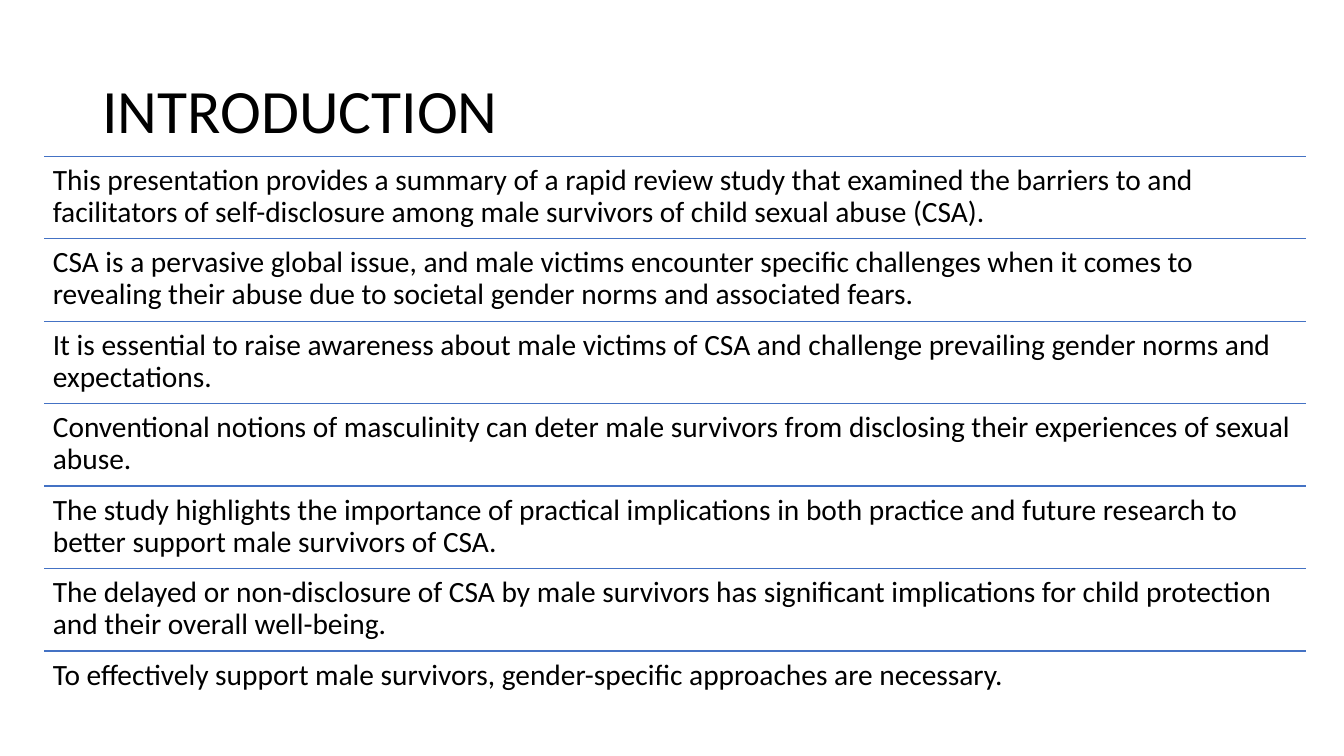
"""Build the introduction slide: a title above seven ruled statements."""
from lxml.etree import SubElement
from pptx import Presentation
from pptx.dml.color import RGBColor
from pptx.enum.shapes import MSO_CONNECTOR
from pptx.enum.text import MSO_ANCHOR, MSO_AUTO_SIZE, PP_ALIGN
from pptx.oxml.ns import qn
from pptx.util import Pt

TITLE = "INTRODUCTION"
STATEMENTS = [
    "This presentation provides a summary of a rapid review study that examined the barriers to and "
    "facilitators of self-disclosure among male survivors of child sexual abuse (CSA).",
    "CSA is a pervasive global issue, and male victims encounter specific challenges when it comes to "
    "revealing their abuse due to societal gender norms and associated fears.",
    "It is essential to raise awareness about male victims of CSA and challenge prevailing gender norms "
    "and expectations.",
    "Conventional notions of masculinity can deter male survivors from disclosing their experiences of "
    "sexual abuse.",
    "The study highlights the importance of practical implications in both practice and future research "
    "to better support male survivors of CSA.",
    "The delayed or non-disclosure of CSA by male survivors has significant implications for child "
    "protection and their overall well-being.",
    "To effectively support male survivors, gender-specific approaches are necessary.",
]
THEME = {
    "font": "Calibri",
    "text": RGBColor(0, 0, 0),
    "rule": RGBColor(0x44, 0x72, 0xC4),
    "title_size": 44,
    "body_size": 21,
}
LEFT, TOP, WIDTH, PITCH = 31.5, 111.6, 901.6, 58.92
INSET = 6.3


def write(tf, text, size, anchor=MSO_ANCHOR.TOP, inset=None):
    """Fill a text frame with one formatted paragraph."""
    tf.word_wrap = True
    tf.auto_size = MSO_AUTO_SIZE.NONE
    tf.vertical_anchor = anchor
    if inset is not None:
        tf.margin_left = tf.margin_right = tf.margin_top = tf.margin_bottom = Pt(inset)
    p = tf.paragraphs[0]
    p.alignment = PP_ALIGN.LEFT
    p.line_spacing = 0.9
    r = p.add_run()
    r.text = text
    r.font.name = THEME["font"]
    r.font.size = Pt(size)
    r.font.color.rgb = THEME["text"]


def add_rule(s, y):
    """Draw a full-width rule at the given height."""
    rule = s.shapes.add_connector(
        MSO_CONNECTOR.STRAIGHT, Pt(LEFT), Pt(y), Pt(LEFT + WIDTH), Pt(y))
    rule.line.color.rgb = THEME["rule"]
    rule.line.width = Pt(1)
    SubElement(rule._element.spPr, qn("a:effectLst"))


def main():
    """Build and save the slide."""
    prs = Presentation()
    prs.slide_width, prs.slide_height = Pt(960), Pt(540)
    s = prs.slides.add_slide(prs.slide_layouts[5])

    title = s.shapes.title
    title.left, title.top, title.width, title.height = Pt(66), Pt(28.8), Pt(828), Pt(104.4)
    write(title.text_frame, TITLE, THEME["title_size"], anchor=MSO_ANCHOR.MIDDLE)

    for i, statement in enumerate(STATEMENTS):
        y = TOP + i * PITCH
        add_rule(s, y)
        sp = s.shapes.add_textbox(Pt(LEFT), Pt(y), Pt(WIDTH), Pt(PITCH))
        write(sp.text_frame, statement, THEME["body_size"], inset=INSET)

    prs.save("out.pptx")


if __name__ == "__main__":
    main()
